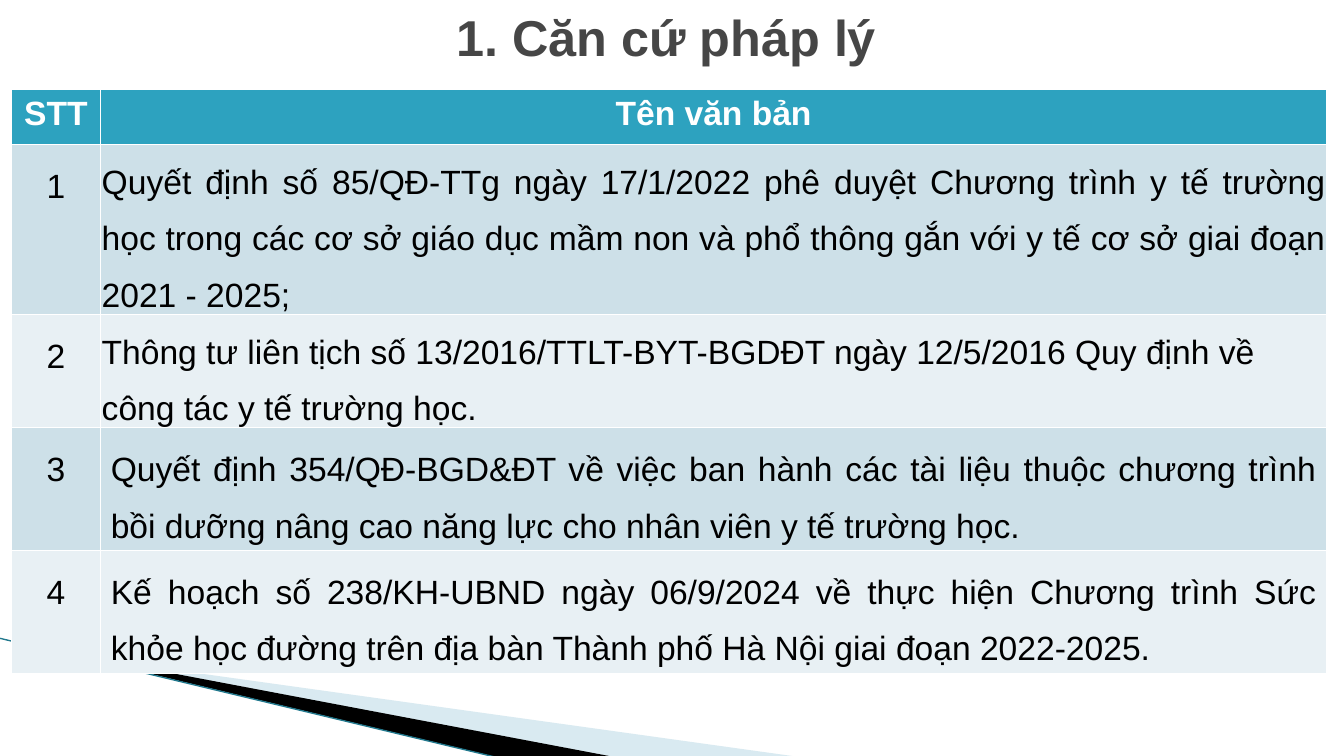
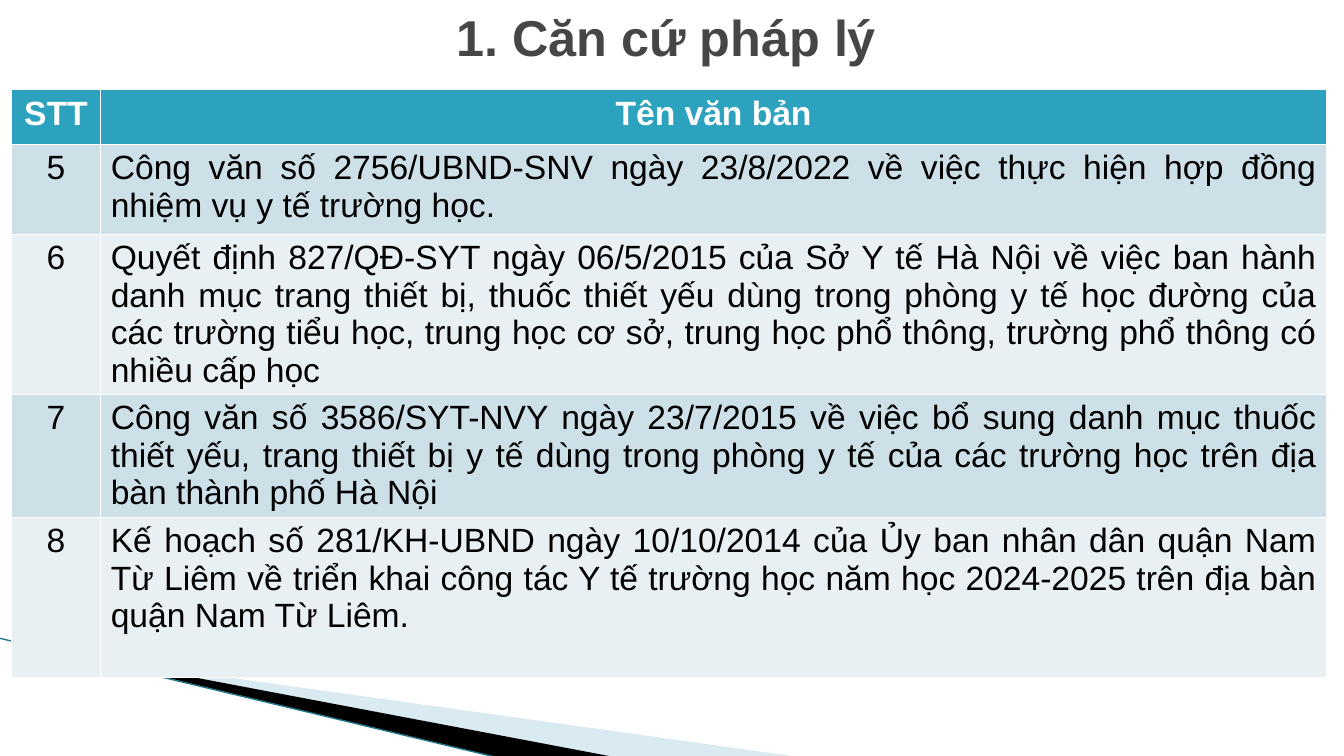
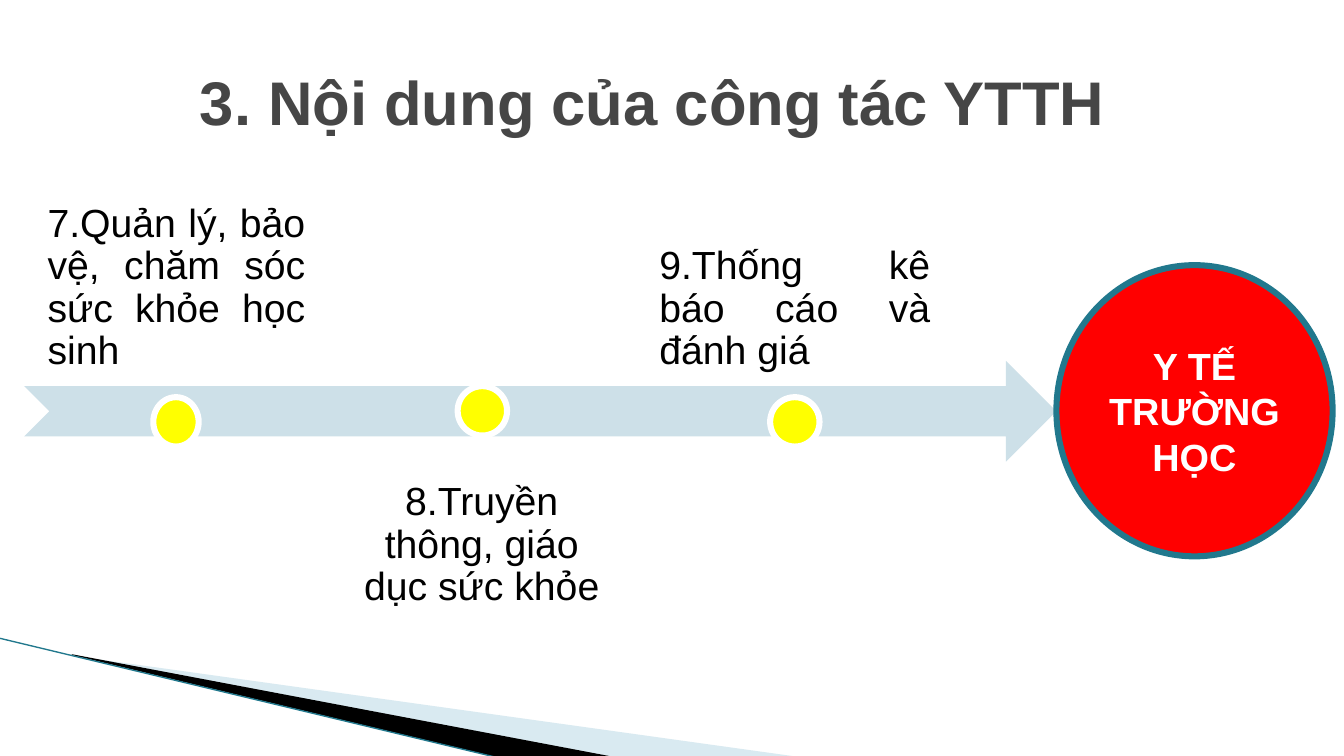
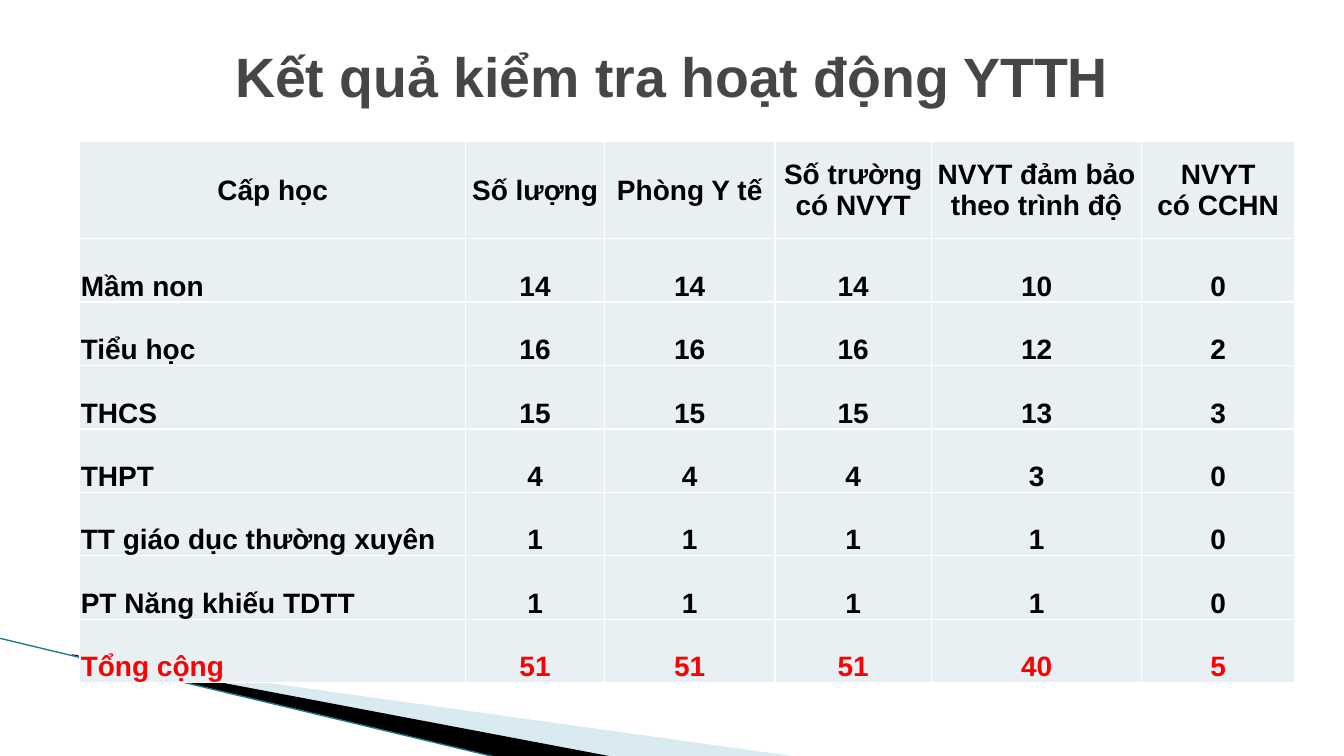
from lxml import etree
from pptx import Presentation
from pptx.dml.color import RGBColor
from pptx.enum.shapes import MSO_CONNECTOR, MSO_SHAPE, PP_PLACEHOLDER
from pptx.enum.text import MSO_ANCHOR, MSO_AUTO_SIZE, PP_ALIGN
from pptx.oxml.ns import qn
from pptx.util import Pt

LEFT, CENTER, JUSTIFY = PP_ALIGN.LEFT, PP_ALIGN.CENTER, PP_ALIGN.JUSTIFY
TOP, MIDDLE, BOTTOM = MSO_ANCHOR.TOP, MSO_ANCHOR.MIDDLE, MSO_ANCHOR.BOTTOM
ELLIPSE, ARROW = MSO_SHAPE.OVAL, MSO_SHAPE.NOTCHED_RIGHT_ARROW
STRAIGHT, TITLE, NO_FIT = MSO_CONNECTOR.STRAIGHT, PP_PLACEHOLDER.TITLE, MSO_AUTO_SIZE.NONE

FONT = "Arial"
COLORS = {
    name: RGBColor.from_string(value)
    for name, value in {
        "title": "464646",
        "text": "000000",
        "white": "FFFFFF",
        "header": "2DA2BF",
        "band": "CDE0E8",
        "pale": "E8F0F4",
        "wedge": "A0CBDC",
        "teal": "21788D",
        "red": "FF0000",
        "yellow": "FFFF00",
    }.items()
}

presentation = Presentation()
presentation.slide_width, presentation.slide_height = Pt(960), Pt(540)
layout = presentation.slide_layouts[5]
for placeholder in list(layout.placeholders):
    if placeholder.placeholder_format.type != TITLE:
        placeholder.element.getparent().remove(placeholder.element)


def add_slide(text, left, top, width, height, size):
    slide = presentation.slides.add_slide(layout)
    title = slide.shapes.title
    title.left, title.top, title.width, title.height = Pt(left), Pt(top), Pt(width), Pt(height)
    frame = title.text_frame
    frame.text = text
    frame.word_wrap = True
    frame.auto_size = NO_FIT
    frame.vertical_anchor = MIDDLE
    paragraph = frame.paragraphs[0]
    paragraph.alignment = CENTER
    paragraph.font.name, paragraph.font.size, paragraph.font.bold = FONT, Pt(size), True
    paragraph.font.color.rgb = COLORS["title"]
    return slide


def add_table(slide, left, top, widths, heights, rows, size):
    table = slide.shapes.add_table(
        len(rows), len(widths), Pt(left), Pt(top), Pt(sum(widths)), Pt(sum(heights))
    ).table
    table.horz_banding = False
    for column, width in zip(table.columns, widths):
        column.width = Pt(width)
    for row, height, texts in zip(table.rows, heights, rows):
        row.height = Pt(height)
        for cell, text in zip(row.cells, texts):
            cell.text = text
            cell.fill.solid()
            cell.fill.fore_color.rgb = COLORS["pale"]
            paragraph = cell.text_frame.paragraphs[0]
            paragraph.alignment = CENTER
            paragraph.font.name, paragraph.font.size = FONT, Pt(size)
            paragraph.font.color.rgb = COLORS["text"]
    return table


legal_pages = [
    (1.5, [38.9, 121.4, 80.7, 87.1, 87.9], [
        "Quyết định số 85/QĐ-TTg ngày 17/1/2022 phê duyệt Chương trình y tế trường học trong các cơ sở giáo dục mầm non và phổ thông gắn với y tế cơ sở giai đoạn 2021 - 2025;",
        "Thông tư liên tịch số 13/2016/TTLT-BYT-BGDĐT ngày 12/5/2016 Quy định về công tác y tế trường học.",
        "Quyết định 354/QĐ-BGD&ĐT về việc ban hành các tài liệu thuộc chương trình bồi dưỡng nâng cao năng lực cho nhân viên y tế trường học.",
        "Kế hoạch số 238/KH-UBND ngày 06/9/2024 về thực hiện Chương trình Sức khỏe học đường trên địa bàn Thành phố Hà Nội giai đoạn 2022-2025.",
    ]),
    (1.0, [38.9, 64.3, 114.3, 87.9, 114.3], [
        "Công văn số 2756/UBND-SNV ngày 23/8/2022 về việc thực hiện hợp đồng nhiệm vụ y tế trường học.",
        "Quyết định 827/QĐ-SYT ngày 06/5/2015 của Sở Y tế Hà Nội về việc ban hành danh mục trang thiết bị, thuốc thiết yếu dùng trong phòng y tế học đường của các trường tiểu học, trung học cơ sở, trung học phổ thông, trường phổ thông có nhiều cấp học",
        "Công văn số 3586/SYT-NVY ngày 23/7/2015 về việc bổ sung danh mục thuốc thiết yếu, trang thiết bị y tế dùng trong phòng y tế của các trường học trên địa bàn thành phố Hà Nội",
        "Kế hoạch số 281/KH-UBND ngày 10/10/2014 của Ủy ban nhân dân quận Nam Từ Liêm về triển khai công tác Y tế trường học năm học 2024-2025 trên địa bàn quận Nam Từ Liêm.",
    ]),
]
number = 1
for spacing, heights, documents in legal_pages:
    slide = add_slide("1. Căn cứ pháp lý", 25, 10, 902, 32, 36)
    rows = [["STT", "Tên văn bản"]]
    for document in documents:
        rows.append([str(number), document])
        number += 1
    table = add_table(slide, 8, 64.2, [64, 875.5], heights, rows, 24)
    for cell in table.rows[0].cells:
        cell.fill.fore_color.rgb = COLORS["header"]
        font = cell.text_frame.paragraphs[0].font
        font.bold = True
        font.color.rgb = COLORS["white"]
    for index in range(1, len(rows)):
        for cell in table.rows[index].cells:
            cell.text_frame.paragraphs[0].line_spacing = spacing
            if index % 2:
                cell.fill.fore_color.rgb = COLORS["band"]
        table.cell(index, 1).text_frame.paragraphs[0].alignment = JUSTIFY
    if spacing > 1:
        for index in (1, 2):
            cell = table.cell(index, 1)
            cell.vertical_anchor = MIDDLE
            cell.margin_left = cell.margin_right = cell.margin_top = Pt(0.7)
            cell.margin_bottom = 0
        table.cell(2, 1).text_frame.paragraphs[0].alignment = LEFT

first_slide = presentation.slides[0]
decorations = []
for color, points in [
    ("wedge", [(52.6, 468.5), (571, 540.7), (437.8, 540.7), (52.6, 468)]),
    ("text", [(51.1, 467.3), (438.5, 540.7), (357.1, 541.4), (51.8, 468)]),
]:
    corners = [(Pt(x), Pt(y)) for x, y in points]
    builder = first_slide.shapes.build_freeform(*corners[0])
    builder.add_line_segments(corners[1:])
    wedge = builder.convert_to_shape()
    wedge.shadow.inherit = False
    wedge.fill.solid()
    wedge.fill.fore_color.rgb = COLORS[color]
    wedge.line.fill.background()
    decorations.append(wedge)
light_color = decorations[0].element.spPr.find(qn("a:solidFill"))[0]
etree.SubElement(light_color, qn("a:alpha"), val="40000")
edge = first_slide.shapes.add_connector(STRAIGHT, Pt(-0.7), Pt(455.8), Pt(356.4), Pt(541.4))
edge.line.color.rgb = COLORS["teal"]
edge.line.width = Pt(0.95)
etree.SubElement(edge.element.spPr, qn("a:effectLst"))
decorations.append(edge)
for position, decoration in enumerate(decorations, 2):
    layout.shapes.element.insert(position, decoration.element)

slide = add_slide("3. Nội dung của công tác YTTH", 51, 36, 831, 72, 44)
milestones = [
    ("7.Quản lý, bảo vệ, chăm sóc sức khỏe học sinh", (18, 111, 216, 171.4), BOTTOM, JUSTIFY),
    ("8.Truyền thông, giáo dục sức khỏe", (239, 328.3, 210.2, 139.7), TOP, CENTER),
    ("9.Thống kê báo cáo và đánh giá", (455, 111, 225.4, 171.4), BOTTOM, JUSTIFY),
]
for text, (left, top, width, height), anchor, alignment in milestones:
    box = slide.shapes.add_textbox(Pt(left), Pt(top), Pt(width), Pt(height))
    frame = box.text_frame
    frame.text = text
    frame.word_wrap = True
    frame.vertical_anchor = anchor
    frame.margin_left = frame.margin_right = frame.margin_top = frame.margin_bottom = Pt(16)
    paragraph = frame.paragraphs[0]
    paragraph.alignment = alignment
    paragraph.line_spacing = 0.9
    paragraph.font.name, paragraph.font.size = FONT, Pt(28)
    paragraph.font.color.rgb = COLORS["text"]

for kind, left, top, width, height, fill, line in [
    (ARROW, 17.3, 257.8, 737.3, 72, "band", None),
    (ELLIPSE, 109.5, 283.7, 32.4, 35.3, "yellow", "white"),
    (ELLIPSE, 326.9, 275.8, 35.3, 35.3, "yellow", "white"),
    (ELLIPSE, 550.1, 283.7, 35.3, 35.3, "yellow", "white"),
    (ELLIPSE, 754.6, 189.4, 197.3, 208, "red", "teal"),
]:
    shape = slide.shapes.add_shape(kind, Pt(left), Pt(top), Pt(width), Pt(height))
    shape.shadow.inherit = False
    shape.fill.solid()
    shape.fill.fore_color.rgb = COLORS[fill]
    if line:
        shape.line.color.rgb = COLORS[line]
        shape.line.width = Pt(4.33)
    else:
        shape.line.fill.background()
frame = shape.text_frame
frame.text = "Y TẾ TRƯỜNG HỌC"
frame.word_wrap = True
frame.vertical_anchor = MIDDLE
frame.margin_left = frame.margin_right = 0
paragraph = frame.paragraphs[0]
paragraph.alignment = CENTER
paragraph.font.name, paragraph.font.size, paragraph.font.bold = FONT, Pt(27), True
paragraph.font.color.rgb = COLORS["white"]

slide = add_slide("Kết quả kiểm tra hoạt động YTTH", 48, 26, 864, 55, 39.6)
results = [
    ["Cấp học", "Số lượng", "Phòng Y tế", "Số trường có NVYT", "NVYT đảm bảo\vtheo trình độ", "NVYT\vcó CCHN"],
    ["Mầm non", "14", "14", "14", "10", "0"],
    ["Tiểu học", "16", "16", "16", "12", "2"],
    ["THCS", "15", "15", "15", "13", "3"],
    ["THPT", "4", "4", "4", "3", "0"],
    ["TT giáo dục thường xuyên", "1", "1", "1", "1", "0"],
    ["PT Năng khiếu TDTT", "1", "1", "1", "1", "0"],
    ["Tổng cộng", "51", "51", "51", "40", "5"],
]
table = add_table(
    slide, 57, 100.8, [275.6, 99.2, 121.8, 111.8, 150.2, 109.2],
    [69.6] + [45.35] * 7, results, 20,
)
table.first_row = False
for index, row in enumerate(table.rows):
    for cell in row.cells:
        cell.margin_left = cell.margin_right = cell.margin_top = Pt(0.7)
        cell.margin_bottom = 0
        cell.vertical_anchor = BOTTOM if index else MIDDLE
        paragraph = cell.text_frame.paragraphs[0]
        paragraph.font.bold = True
        if index:
            paragraph.line_spacing = 2.0
        if index == len(results) - 1:
            paragraph.font.color.rgb = COLORS["red"]
    if index:
        row.cells[0].text_frame.paragraphs[0].alignment = LEFT

presentation.save("out.pptx")
